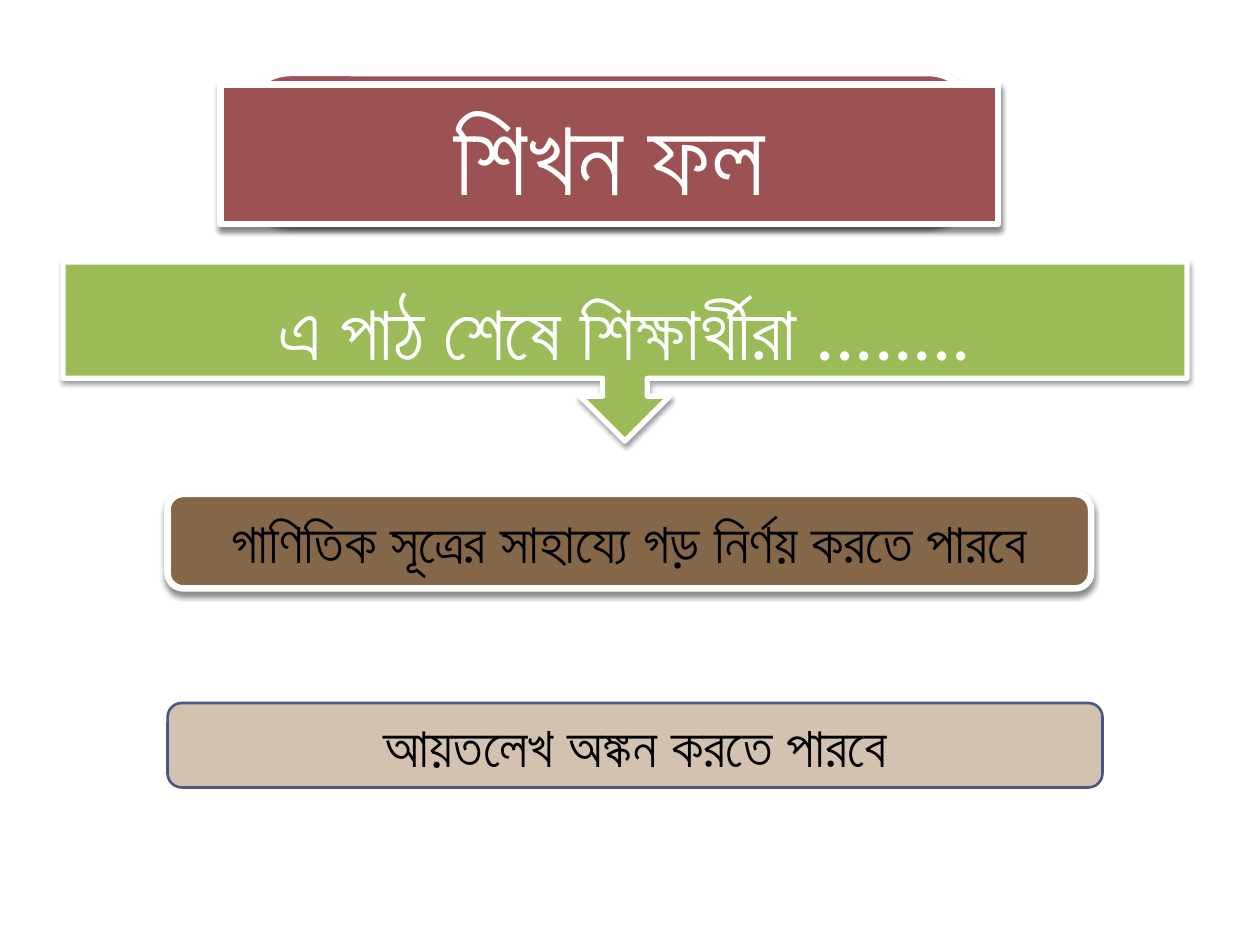
from lxml.etree import SubElement
from pptx import Presentation
from pptx.dml.color import RGBColor
from pptx.enum.shapes import MSO_SHAPE as Shape
from pptx.enum.text import MSO_ANCHOR as Anchor, PP_ALIGN as Align
from pptx.oxml.ns import qn
from pptx.util import Inches, Pt

COLORS = {
    "white": "FFFFFF",
    "black": "000000",
    "maroon": "9C5252",
    "green": "9BBB59",
    "brown": "846648",
    "sand": "D4C2B0",
    "navy": "475785",
}


class LessonSlide:
    """Holds the lesson style and draws its elements on the current slide."""

    font = "Calibri"

    def __init__(self, deck):
        self.page = deck.slides.add_slide(deck.slide_layouts[5])

    def color(self, name):
        return RGBColor.from_string(COLORS[name])

    def paint(self, box, fill, line, width):
        box.fill.solid()
        box.fill.fore_color.rgb = self.color(fill)
        box.line.color.rgb = self.color(line)
        box.line.width = Pt(width)

    def shadow(self, box, opacity, blur, distance):
        properties = box._element.spPr
        for old in properties.findall(qn("a:effectLst")):
            properties.remove(old)
        effects = SubElement(properties, qn("a:effectLst"))
        outer = SubElement(effects, qn("a:outerShdw"), blurRad=str(Pt(blur)),
                           dist=str(Pt(distance)), dir="5400000", rotWithShape="0")
        tint = SubElement(outer, qn("a:srgbClr"), val=COLORS["black"])
        SubElement(tint, qn("a:alpha"), val=str(opacity * 1000))

    def label(self, box, text, size, color, anchor=Anchor.MIDDLE):
        frame = box.text_frame
        frame.text = text
        frame.word_wrap = True
        frame.vertical_anchor = anchor
        para = frame.paragraphs[0]
        para.alignment = Align.CENTER
        para.font.name = self.font
        para.font.size = Pt(size)
        para.font.color.rgb = self.color(color)

    def panel(self, kind, left, top, width, height, fill, line="white", weight=3.75):
        box = self.page.shapes.add_shape(
            kind, Inches(left), Inches(top), Inches(width), Inches(height))
        box.shadow.inherit = False
        self.paint(box, fill, line, weight)
        return box

    def title(self, text, left, top, width, height):
        box = self.page.shapes.title
        box.left, box.top = Inches(left), Inches(top)
        box.width, box.height = Inches(width), Inches(height)
        self.paint(box, "maroon", "white", 3.75)
        self.shadow(box, 45, 3, 2.4)
        self.label(box, text, 60, "white", Anchor.TOP)
        self.page.shapes._spTree.append(box._element)


def main():
    deck = Presentation()
    deck.slide_width, deck.slide_height = Inches(10), Inches(7.5)
    lesson = LessonSlide(deck)

    backing = lesson.panel(Shape.ROUNDED_RECTANGLE, 1.92, 0.58, 5.83, 1.17, "maroon")
    backing.adjustments[0] = 0.33
    lesson.shadow(backing, 45, 3, 2.4)
    lesson.title("শিখন ফল", 1.75, 0.67, 6.17, 1.11)

    first_goal = lesson.panel(
        Shape.FLOWCHART_ALTERNATE_PROCESS, 1.33, 3.92, 7.33, 0.75, "brown")
    lesson.shadow(first_goal, 45, 3, 2.4)
    lesson.label(first_goal, "গাণিতিক সূত্রের সাহায্যে গড় নির্ণয় করতে পারবে", 32, "black")

    callout = lesson.panel(
        Shape.DOWN_ARROW_CALLOUT, 0.5, 2.08, 8.92, 1.42, "green", weight=3)
    lesson.shadow(callout, 38, 3.1, 1.6)
    lesson.label(callout, "এ পাঠ শেষে শিক্ষার্থীরা ........", 44, "white")
    callout.text_frame.margin_top = Inches(0.2)

    second_goal = lesson.panel(
        Shape.FLOWCHART_ALTERNATE_PROCESS, 1.33, 5.58, 7.42, 0.67, "sand", "navy", 1.5)
    lesson.label(second_goal, "আয়তলেখ অঙ্কন করতে পারবে", 32, "black")

    deck.save("out.pptx")


if __name__ == "__main__":
    main()
